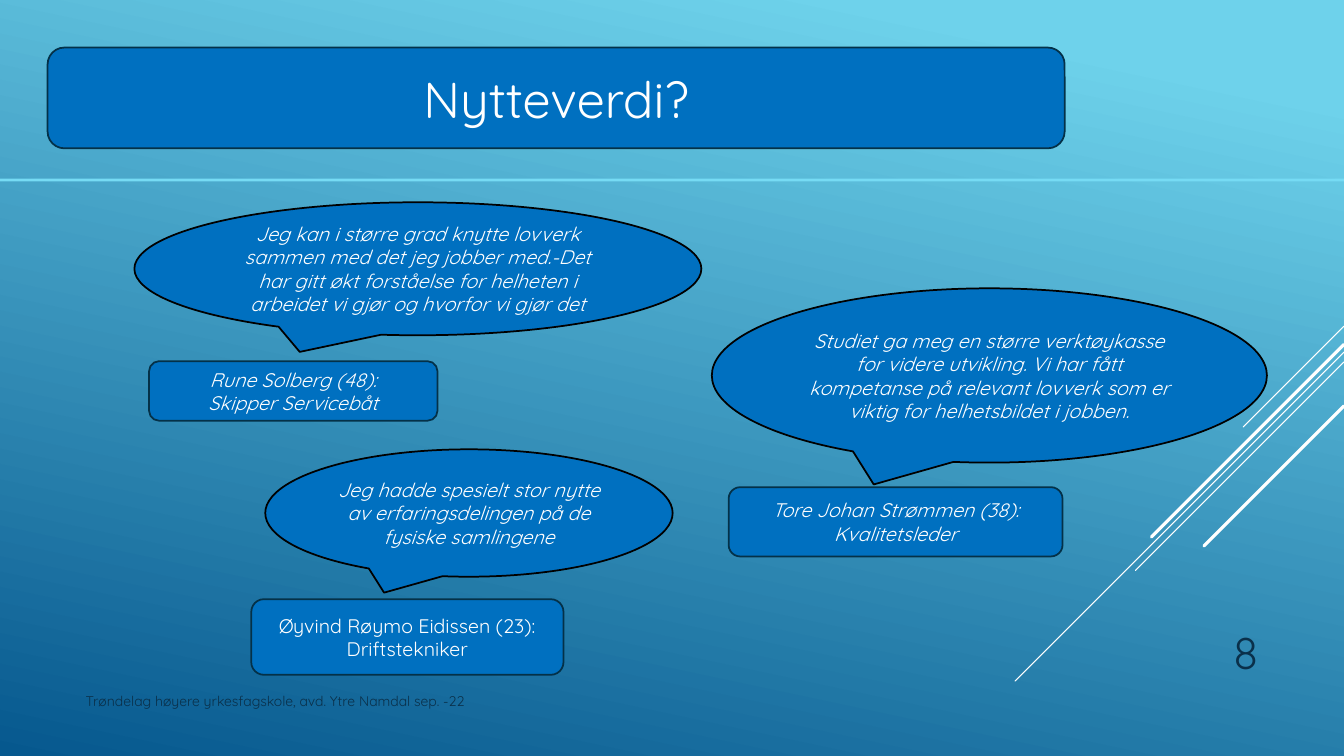
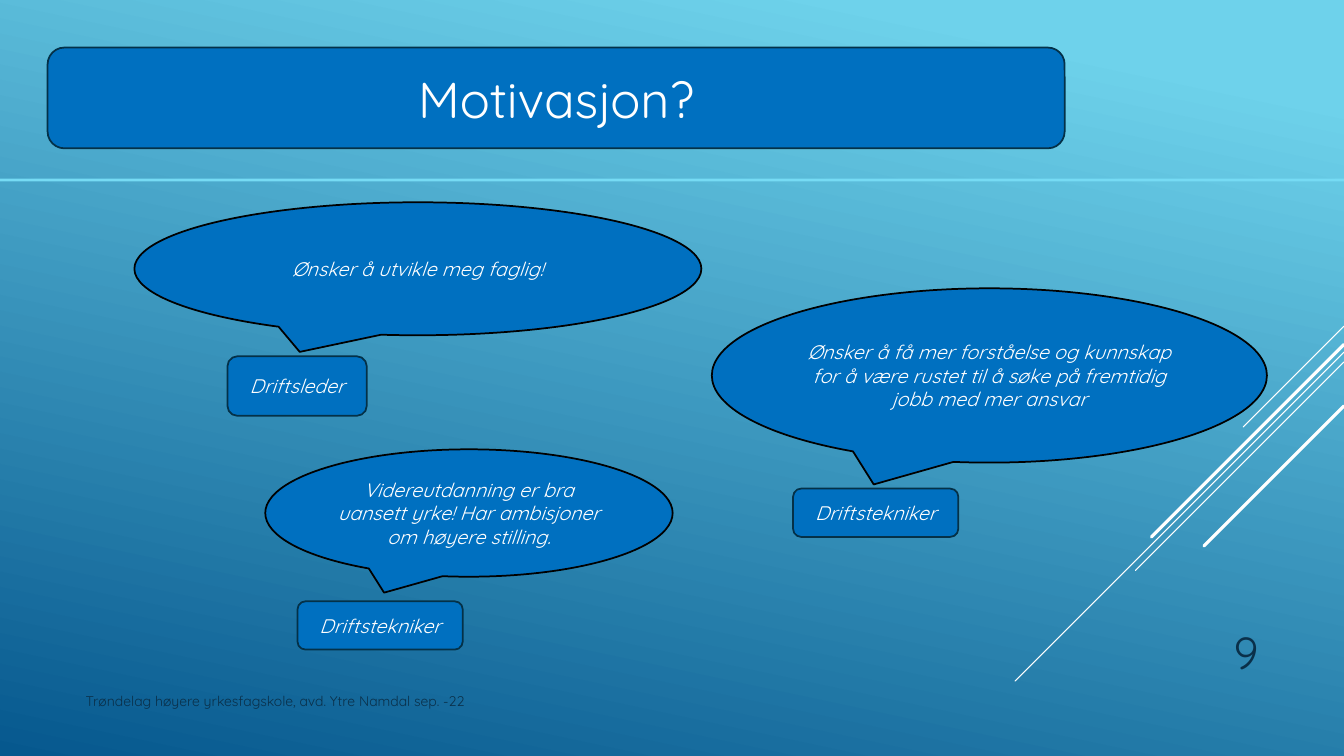
from pptx import Presentation
from pptx.dml.color import RGBColor
from pptx.enum.shapes import MSO_CONNECTOR as Connector, MSO_SHAPE as Shape
from pptx.enum.text import MSO_ANCHOR as Anchor, MSO_AUTO_SIZE as AutoSize, PP_ALIGN as Align
from pptx.oxml.ns import qn
from pptx.util import Pt
from lxml import etree

COLORS = {
    "sky": "6ED2EB", "deep": "06588E", "rule": "76DBF4", "box": "0070C0",
    "box_line": "043148", "black": "000000", "white": "FFFFFF", "footer": "0A304A",
}
FONT = "Quicksand"
WIDTH, HEIGHT = 960, 540
BANNER = (34, 34, 726.5, 72)
FOOTER = "Trøndelag høyere yrkesfagskole, avd. Ytre Namdal sep. -22"

# Diagonal rays leave the right edge at 45 degrees: top, length, line width
RAYS = [(233, 72, 0.75), (251.5, 235, 0.75), (258.5, 149, 0.75),
        (246, 137.5, 2.25), (290, 100, 2.25)]

# Callout places, shared by both slides
TOP_LEFT = (96, 144.5, 405, 95)
BOTTOM_LEFT = (189.5, 321, 291, 91)
RIGHT = (508.5, 206, 396.5, 124.5)

# Each voice: callout box, quote, speaker lines, speaker box offset and size, speaker in italics
SLIDES = [
    ("8", "Nytteverdi?", [
        (BOTTOM_LEFT, "Jeg hadde spesielt stor nytte av erfaringsdelingen på de fysiske samlingene",
         ["Øyvind Røymo Eidissen (23):", "Driftstekniker"], (-10, 107, 223, 54), False),
        (TOP_LEFT, "Jeg kan i større grad knytte lovverk sammen med det jeg jobber med.-Det har gitt "
         "økt forståelse for helheten i arbeidet vi gjør og hvorfor vi gjør det",
         ["Rune Solberg (48):", "Skipper Servicebåt"], (10.5, 113.5, 206, 42.5), True),
        (RIGHT, "Studiet ga meg en større verktøykasse for videre utvikling. Vi har fått kompetanse "
         "på relevant lovverk som er viktig for helhetsbildet i jobben.",
         ["Tore Johan Strømmen (38):", "Kvalitetsleder"], (12, 142, 238.5, 49.5), True),
    ]),
    ("9", "Motivasjon?", [
        (BOTTOM_LEFT, "Videreutdanning er bra uansett yrke! Har ambisjoner om høyere stilling.",
         ["Driftstekniker"], (23, 108.5, 118, 34.5), True),
        (TOP_LEFT, "Ønsker å utvikle meg faglig!",
         ["Driftsleder"], (66.5, 110, 99.5, 42.5), True),
        (RIGHT, "Ønsker å få mer forståelse og kunnskap for å være rustet til å søke på fremtidig "
         "jobb med mer ansvar",
         ["Driftstekniker"], (58, 143, 118, 34.5), True),
    ]),
]


def rgb(name):
    return RGBColor.from_string(COLORS[name])


def points(*values):
    return [Pt(value) for value in values]


def write(shape, *lines, size=14, color="white", italic=False, align=Align.CENTER):
    frame = shape.text_frame
    frame.word_wrap = True
    frame.auto_size = AutoSize.NONE
    frame.vertical_anchor = Anchor.MIDDLE
    for index, line in enumerate(lines):
        paragraph = frame.add_paragraph() if index else frame.paragraphs[0]
        paragraph.alignment = align
        run = paragraph.add_run()
        run.text = line
        font = run.font
        font.name, font.size, font.italic = FONT, Pt(size), italic
        font.color.rgb = rgb(color)


def add_box(slide, kind, box, fill="box", line=None):
    shape = slide.shapes.add_shape(kind, *points(*box))
    shape.shadow.inherit = False
    shape.fill.solid()
    shape.fill.fore_color.rgb = rgb(fill)
    if line:
        shape.line.color.rgb = rgb(line)
        shape.line.width = Pt(1.25)
    else:
        shape.line.fill.background()
    return shape


def set_background(master):
    fill = master.background.fill
    fill.gradient()
    fill.gradient_angle = 258
    for stop, position, color in zip(fill.gradient_stops, (0.1, 1), ("sky", "deep")):
        stop.position = position
        stop.color.rgb = rgb(color)


def add_rays(slide):
    for top, length, width in RAYS:
        ray = slide.shapes.add_connector(
            Connector.STRAIGHT, *points(WIDTH, top, WIDTH - length, top + length))
        ray.line.color.rgb = rgb("white")
        ray.line.width = Pt(width)
        properties = ray.element.spPr
        properties.find(qn("a:ln")).set("cap", "rnd")
        etree.SubElement(properties, qn("a:effectLst"))


def add_footer(slide, number):
    footer = slide.shapes.add_textbox(*points(54, 486, 594, 29))
    write(footer, FOOTER, size=10, color="footer", align=Align.LEFT)
    page = slide.shapes.add_textbox(*points(816, 439, 90, 53))
    write(page, number, size=32, color="footer", align=Align.RIGHT)


def add_title(slide, box, text):
    """Place the title placeholder in front of its rounded banner."""
    banner = add_box(slide, Shape.ROUNDED_RECTANGLE, box, line="box_line")
    title = slide.shapes.title
    title.left, title.top, title.width, title.height = points(*box)
    write(title, text, size=36)
    banner.element.addnext(title.element)


def add_voice(slide, box, quote, speaker, speaker_box, italic):
    """Place a speech balloon in the box and the speaker relative to its corner."""
    balloon = add_box(slide, Shape.OVAL_CALLOUT, box, line="black")
    write(balloon, quote, italic=True)
    left, top, width, height = speaker_box
    label = add_box(slide, Shape.ROUNDED_RECTANGLE,
                    (box[0] + left, box[1] + top, width, height), line="box_line")
    write(label, *speaker, italic=italic)


def add_voices_slide(presentation, number, title, voices):
    slide = presentation.slides.add_slide(presentation.slide_layouts[5])
    add_rays(slide)
    add_box(slide, Shape.RECTANGLE, (0, 127.5, WIDTH, 2), fill="rule")
    add_footer(slide, number)
    for voice in voices:
        add_voice(slide, *voice)
    add_title(slide, BANNER, title)


def main():
    presentation = Presentation()
    presentation.slide_width, presentation.slide_height = points(WIDTH, HEIGHT)
    set_background(presentation.slide_master)
    for content in SLIDES:
        add_voices_slide(presentation, *content)
    presentation.save("out.pptx")


if __name__ == "__main__":
    main()
